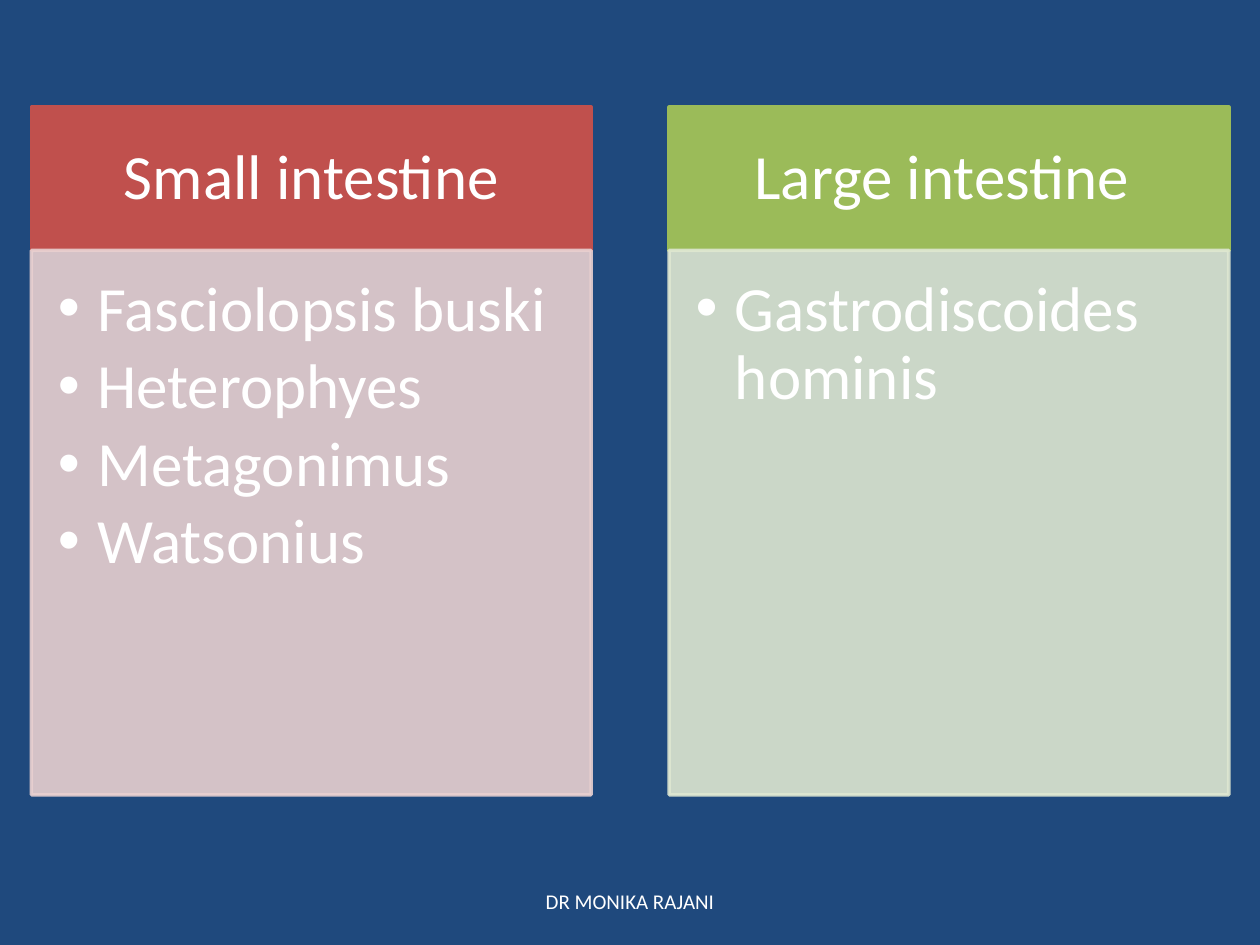
from lxml import etree
from pptx import Presentation
from pptx.dml.color import RGBColor
from pptx.enum import shapes, text
from pptx.oxml.ns import qn
from pptx.util import Pt

NAVY = RGBColor(0x1F, 0x49, 0x7D)
WHITE = RGBColor(0xFF, 0xFF, 0xFF)
RED = RGBColor(0xC0, 0x50, 0x4D)
PALE_RED = RGBColor(0xE8, 0xD0, 0xD0)
GREEN = RGBColor(0x9B, 0xBB, 0x59)
PALE_GREEN = RGBColor(0xDE, 0xE7, 0xD1)

COLUMN_WIDTH, COLUMN_HEIGHT = 319.8, 393
HEADER_HEIGHT = 81.9
COLUMN_TOP, MARGIN, COLUMN_STEP = 61.2, 18, 364.4

COLUMNS = [
    ("Small intestine", RED, PALE_RED,
     ["Fasciolopsis buski", "Heterophyes", "Metagonimus", "Watsonius"]),
    ("Large intestine ", GREEN, PALE_GREEN, ["Gastrodiscoides hominis"]),
]


def set_frame(frame, anchor, insets):
    frame.word_wrap = True
    frame.vertical_anchor = anchor
    (frame.margin_left, frame.margin_top,
     frame.margin_right, frame.margin_bottom) = map(Pt, insets)


def set_font(paragraph, size):
    paragraph.font.name = "Calibri"
    paragraph.font.size = Pt(size)
    paragraph.font.color.rgb = WHITE


def add_panel(slide, box, color, anchor, insets):
    shape = slide.shapes.add_shape(shapes.MSO_SHAPE.RECTANGLE, *map(Pt, box))
    shape.shadow.inherit = False
    shape.fill.solid()
    shape.fill.fore_color.rgb = color
    shape.line.color.rgb = color
    shape.line.width = Pt(2)
    set_frame(shape.text_frame, anchor, insets)
    return shape


def make_translucent(shape, percent):
    for color in shape._element.spPr.iter(qn("a:srgbClr")):
        etree.SubElement(color, qn("a:alpha"), val=str(percent * 1000))


def add_bullet(paragraph, indent):
    properties = paragraph._p.get_or_add_pPr()
    properties.set("marL", str(Pt(indent)))
    properties.set("indent", str(-Pt(indent)))
    etree.SubElement(properties, qn("a:buFont"), typeface="Arial")
    etree.SubElement(properties, qn("a:buChar"), char="•")


def add_column(slide, box, title, color, pale_color, items):
    left, top, width, height = box

    # Header
    header = add_panel(slide, (left, top, width, HEADER_HEIGHT), color,
                       text.MSO_ANCHOR.MIDDLE, (20.16, 11.52, 20.16, 11.52))
    paragraph = header.text_frame.paragraphs[0]
    paragraph.text = title
    paragraph.alignment = text.PP_ALIGN.CENTER
    paragraph.line_spacing = 0.9
    set_font(paragraph, 36)

    # Bulleted list
    body = add_panel(
        slide, (left, top + HEADER_HEIGHT, width, height - HEADER_HEIGHT),
        pale_color, text.MSO_ANCHOR.TOP, (15.12, 15.12, 20.16, 22.68))
    make_translucent(body, 90)
    frame = body.text_frame
    frame.text = "\n".join(items)
    for paragraph in frame.paragraphs:
        paragraph.level = 1
        paragraph.alignment = text.PP_ALIGN.LEFT
        paragraph.line_spacing = 0.9
        paragraph.space_after = Pt(5.4)
        add_bullet(paragraph, 22.5)
        set_font(paragraph, 36)


def add_footer(slide, box, author):
    footer = slide.shapes.add_textbox(*map(Pt, box))
    set_frame(footer.text_frame, text.MSO_ANCHOR.MIDDLE, (7.2, 3.6, 7.2, 3.6))
    paragraph = footer.text_frame.paragraphs[0]
    paragraph.text = author
    paragraph.alignment = text.PP_ALIGN.CENTER
    set_font(paragraph, 12)


def main():
    presentation = Presentation()
    presentation.slide_width, presentation.slide_height = Pt(720), Pt(540)
    slide = presentation.slides.add_slide(presentation.slide_layouts[6])
    slide.background.fill.solid()
    slide.background.fill.fore_color.rgb = NAVY

    for index, column in enumerate(COLUMNS):
        left = MARGIN + index * COLUMN_STEP
        add_column(slide, (left, COLUMN_TOP, COLUMN_WIDTH, COLUMN_HEIGHT),
                   *column)
    add_footer(slide, (246, 500.5, 228, 28.75), "DR MONIKA RAJANI")
    presentation.save("out.pptx")


if __name__ == "__main__":
    main()
